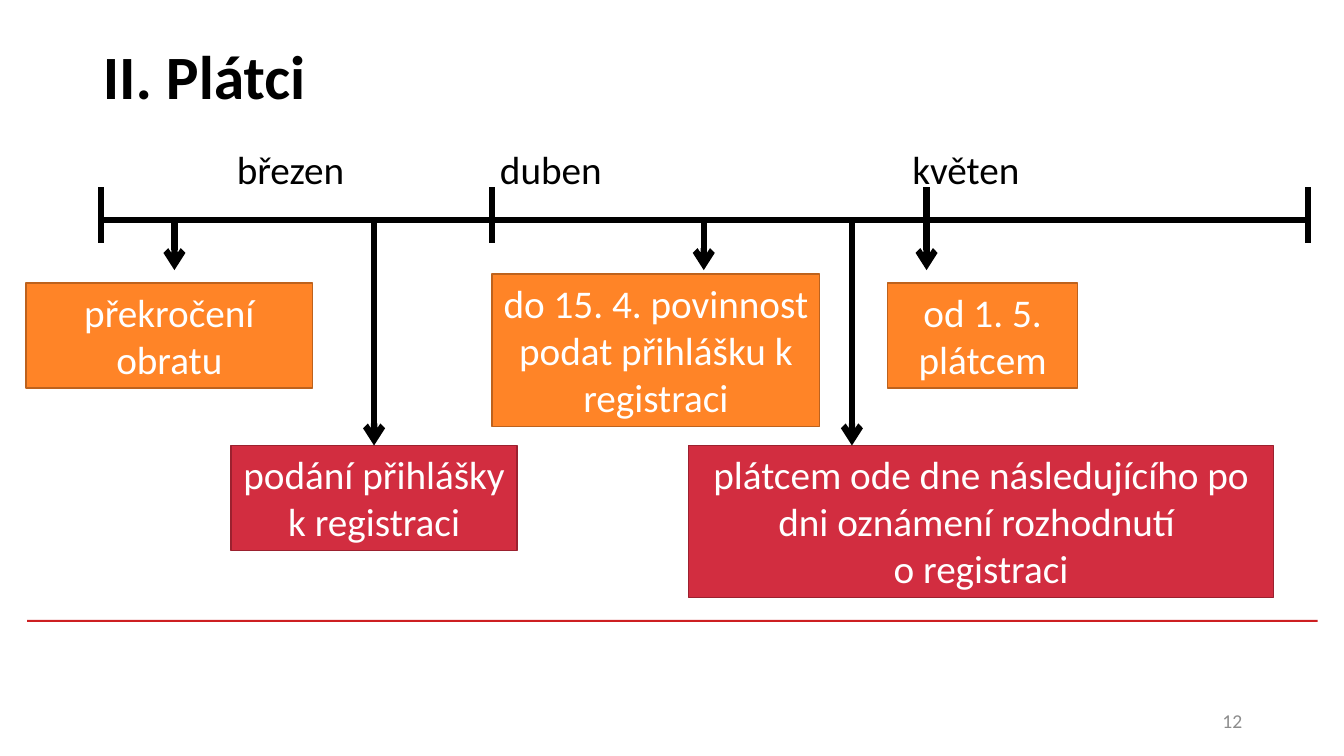
from dataclasses import dataclass
from lxml.etree import SubElement
from pptx import Presentation
from pptx.dml.color import RGBColor
from pptx.enum.shapes import MSO_CONNECTOR, MSO_SHAPE
from pptx.enum.text import MSO_ANCHOR, MSO_AUTO_SIZE, PP_ALIGN
from pptx.oxml.ns import qn
from pptx.util import Inches, Pt


@dataclass(frozen=True)
class Theme:
    font: str = "Calibri"
    black: str = "000000"
    white: str = "FFFFFF"
    gray: str = "8C8C8C"
    rule: str = "CD1F21"
    orange: tuple = ("FF8427", "BD621D")
    red: tuple = ("D22D40", "9B212F")
    title: int = 44
    body: int = 28
    small: int = 14
    stroke: float = 4.5
    edge: float = 1


@dataclass(frozen=True)
class Box:
    text: str
    left: float
    top: float
    width: float
    height: float
    tint: tuple


@dataclass(frozen=True)
class Month:
    name: str
    left: float


THEME = Theme()
START, END, AXIS = 1, 12.97, 2.18
TICKS = (START, 4.88, 9.19, END)
TICK_TOP, TICK_END = 1.86, 2.41
SHORT, LONG = 2.68, 4.42
ARROWS = ((1.73, SHORT), (6.98, SHORT), (9.19, SHORT), (8.45, LONG))
MONTHS = (Month("březen", 2.35), Month("duben", 4.96), Month("květen", 9.05))
TEXT_LEFT, INSET = 0.37, 0.1

FILING = Box("podání přihlášky k registraci", 2.29, LONG, 2.84, 1.04, THEME.red)
BOXES = (
    Box("překročení obratu", 0.26, 2.81, 2.84, 1.04, THEME.orange),
    Box("do 15. 4. povinnost podat přihlášku k registraci",
        4.88, 2.72, 3.25, 1.51, THEME.orange),
    Box("od 1. 5. plátcem", 8.8, 2.81, 1.89, 1.04, THEME.orange),
    Box("plátcem ode dne následujícího po dni oznámení rozhodnutí \vo registraci",
        6.83, LONG, 5.8, 1.51, THEME.red),
)


def style(font, size: int, color: str, bold: bool = False) -> None:
    for key, value in {"name": THEME.font, "size": Pt(size), "bold": bold}.items():
        setattr(font, key, value)
    font.color.rgb = RGBColor.from_string(color)


def setup(frame, anchor=MSO_ANCHOR.TOP) -> None:
    form = {"word_wrap": True, "auto_size": MSO_AUTO_SIZE.NONE,
            "vertical_anchor": anchor}
    for key, value in form.items():
        setattr(frame, key, value)


def draw_rect(slide, left: float, top: float, width: float, height: float, fill: str):
    shape = slide.shapes.add_shape(
        MSO_SHAPE.RECTANGLE, *map(Inches, (left, top, width, height)))
    shape.shadow.inherit = False
    shape.fill.solid()
    shape.fill.fore_color.rgb = RGBColor.from_string(fill)
    return shape


def draw_box(slide, box: Box):
    fill, edge = box.tint
    shape = draw_rect(slide, box.left, box.top, box.width, box.height, fill)
    shape.line.color.rgb = RGBColor.from_string(edge)
    shape.line.width = Pt(THEME.edge)
    setup(shape.text_frame)
    para = shape.text_frame.paragraphs[0]
    para.text = box.text
    para.alignment = PP_ALIGN.CENTER
    style(para.font, THEME.body, THEME.white)
    return shape


def draw_line(slide, x1: float, y1: float, x2: float, y2: float, arrow: bool = False):
    line = slide.shapes.add_connector(
        MSO_CONNECTOR.STRAIGHT, *map(Inches, (x1, y1, x2, y2)))
    line.line.color.rgb = RGBColor.from_string(THEME.black)
    line.line.width = Pt(THEME.stroke)
    if arrow:
        SubElement(line.line._get_or_add_ln(), qn("a:tailEnd"), type="arrow")
    SubElement(line._element.spPr, qn("a:effectLst"))
    return line


def draw_months(slide) -> None:
    area = slide.shapes.add_textbox(*map(Inches, (TEXT_LEFT, 1.39, 12.71, 0.57)))
    setup(area.text_frame)
    para = area.text_frame.paragraphs[0]
    para.text = "".join("\t" + month.name for month in MONTHS)
    tabs = SubElement(para._p.get_or_add_pPr(), qn("a:tabLst"))
    for month in MONTHS:
        stop = Inches(month.left - TEXT_LEFT - INSET)
        SubElement(tabs, qn("a:tab"), pos=str(stop), algn="l")
    style(para.font, THEME.body, THEME.black)


def draw_page(slide) -> None:
    area = slide.shapes.add_textbox(*map(Inches, (9.42, 6.95, 3, 0.4)))
    setup(area.text_frame, MSO_ANCHOR.MIDDLE)
    para = area.text_frame.paragraphs[0]
    para.alignment = PP_ALIGN.RIGHT
    run = para.add_run()
    run.text = "12"
    style(run.font, THEME.small, THEME.gray)


def draw_title(slide) -> None:
    title = slide.shapes.title
    spot = {"left": 0.92, "top": 0.02, "width": 11.5, "height": 1.45}
    for key, value in spot.items():
        setattr(title, key, Inches(value))
    setup(title.text_frame, MSO_ANCHOR.MIDDLE)
    para = title.text_frame.paragraphs[0]
    para.text = "II. Plátci"
    para.alignment = PP_ALIGN.LEFT
    style(para.font, THEME.title, THEME.black, True)


def main() -> None:
    deck = Presentation()
    deck.slide_width, deck.slide_height = Inches(13.33), Inches(7.5)
    slide = deck.slides.add_slide(deck.slide_layouts[5])

    # Title, bottom rule and page number
    draw_title(slide)
    rule = draw_rect(slide, 0.27, 6.15, 12.8, 0.02, THEME.rule)
    rule.line.fill.background()
    draw_page(slide)

    # Time axis with its months
    draw_line(slide, START, AXIS, END, AXIS)
    for tick in TICKS:
        draw_line(slide, tick, TICK_TOP, tick, TICK_END)
    draw_months(slide)

    # Events and their arrows
    for box in BOXES:
        draw_box(slide, box)
    for spot, tip in ARROWS:
        draw_line(slide, spot, AXIS, spot, tip, True)
    filing = draw_box(slide, FILING)
    mid = FILING.left + FILING.width / 2
    draw_line(slide, mid, AXIS, mid, LONG, True).end_connect(filing, 0)

    deck.save("out.pptx")


if __name__ == "__main__":
    main()
